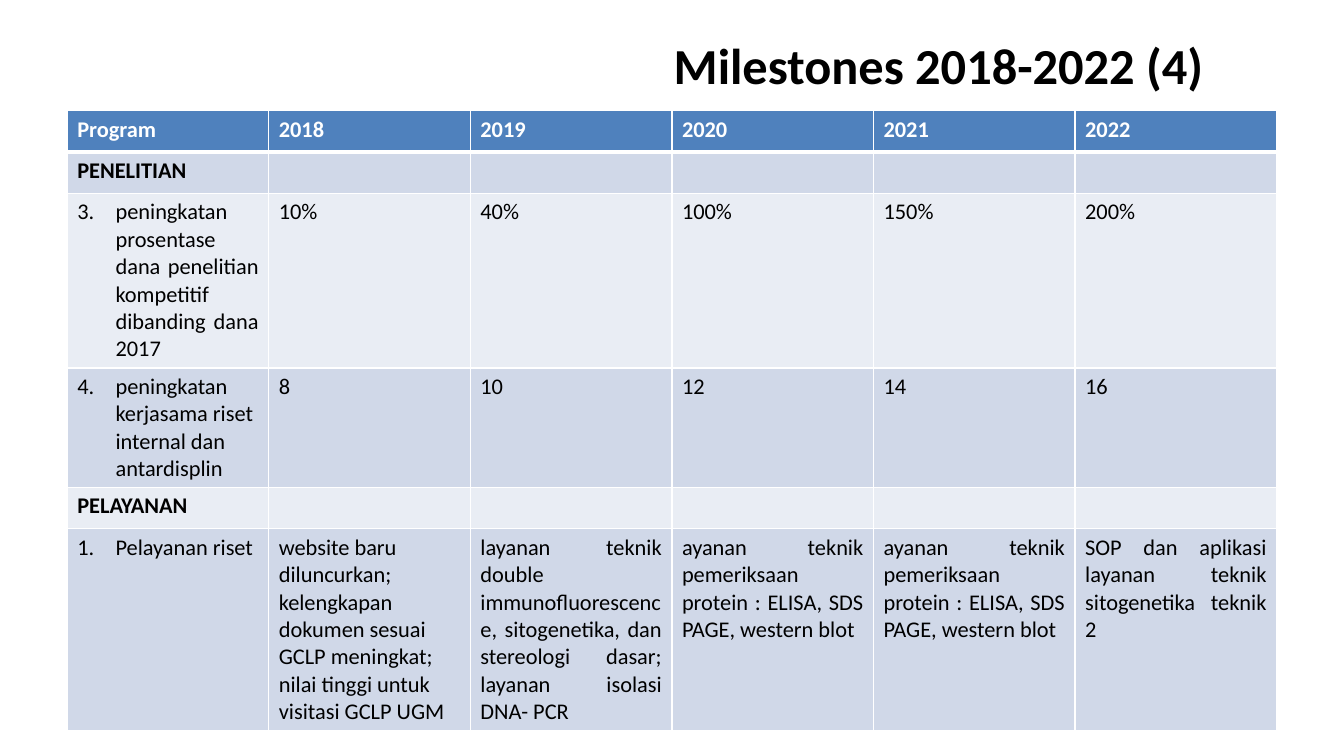
from dataclasses import dataclass
from typing import Optional

from lxml.etree import SubElement
from pptx import Presentation
from pptx.dml.color import RGBColor
from pptx.enum.text import MSO_ANCHOR as Anchor, PP_ALIGN as Align
from pptx.oxml.ns import qn
from pptx.util import Inches, Pt

COLORS = {"header": "4F81BD", "dark": "D0D8E8", "light": "E9EDF4",
          "line": "FFFFFF", "white": "FFFFFF", "black": "000000"}
FONT = "Calibri"
ROW_HEIGHT = Inches(0.41)
INDENT = Inches(0.38)


@dataclass
class Entry:
    text: str = ""
    bold: bool = False
    justified: bool = False
    number: Optional[int] = None


def heading(text: str, justified: bool = False) -> list[Entry]:
    return [Entry(text, bold=True, justified=justified)] + [Entry()] * 5


PROTEIN = Entry("ayanan teknik pemeriksaan protein : ELISA, SDS PAGE, western blot",
                justified=True)
ROWS = [
    [Entry(label, bold=True) for label in ("Program", *map(str, range(2018, 2023)))],
    heading("PENELITIAN"),
    [Entry("peningkatan prosentase dana penelitian kompetitif dibanding dana 2017",
           justified=True, number=3),
     Entry("10%", justified=True),
     *map(Entry, ("40%", "100%", "150%", "200%"))],
    [Entry("peningkatan kerjasama riset internal dan antardisplin", number=4),
     *map(Entry, ("8", "10", "12", "14", "16"))],
    heading("PELAYANAN", justified=True),
    [Entry("Pelayanan riset", justified=True, number=1),
     Entry("website baru diluncurkan; kelengkapan dokumen sesuai GCLP meningkat; "
           "nilai tinggi untuk visitasi GCLP UGM"),
     Entry("layanan teknik double immunofluorescence, sitogenetika, dan stereologi "
           "dasar; layanan isolasi DNA- PCR", justified=True),
     PROTEIN, PROTEIN,
     Entry("SOP dan aplikasi layanan teknik sitogenetika teknik 2", justified=True)],
]


def color(name: str) -> RGBColor:
    return RGBColor.from_string(COLORS[name])


def style_font(para, size: int, bold: bool, shade: str) -> None:
    font = para.font
    font.name, font.size, font.bold = FONT, Pt(size), bold
    font.color.rgb = color(shade)


def add_number(para, number: int) -> None:
    properties = para._p.get_or_add_pPr()
    properties.set("marL", str(INDENT))
    properties.set("indent", str(-INDENT))
    SubElement(properties, qn("a:buAutoNum"), type="arabicPeriod", startAt=str(number))


def add_borders(cell, row: int) -> None:
    properties = cell._tc.get_or_add_tcPr()
    thick_side = {0: "B", 1: "T"}.get(row)  # heavy rule under the header
    for side in "LRTB":
        width = Pt(3 if side == thick_side else 1)
        line = SubElement(properties, qn(f"a:ln{side}"), w=str(width))
        fill = SubElement(line, qn("a:solidFill"))
        SubElement(fill, qn("a:srgbClr"), val=COLORS["line"])


def fill_cell(cell, entry: Entry, row: int) -> None:
    add_borders(cell, row)
    cell.fill.solid()
    cell.fill.fore_color.rgb = color("header" if row == 0 else "dark" if row % 2 else "light")
    para = cell.text_frame.paragraphs[0]
    para.text = entry.text
    if entry.justified:
        para.alignment = Align.JUSTIFY
    if entry.number:
        add_number(para, entry.number)
    style_font(para, 16, entry.bold, "black" if row else "white")


def add_title(page) -> None:
    title = page.shapes.title
    title.left, title.top = Inches(5.95), Inches(0.3)
    title.width, title.height = Inches(6.72), Inches(0.68)
    title.text = "Milestones 2018-2022 (4)"
    title.text_frame.vertical_anchor = Anchor.MIDDLE
    para = title.text_frame.paragraphs[0]
    para.alignment = Align.CENTER
    style_font(para, 36, True, "black")


def add_milestones(page, slide_width: int) -> None:
    height = Inches(6.05)
    frame = page.shapes.add_table(len(ROWS), len(ROWS[0]), int(slide_width * 0.05),
                                  Inches(1.1), int(slide_width * 0.9), height)
    for row, entries in enumerate(ROWS):
        frame.table.rows[row].height = ROW_HEIGHT  # rows grow with their text
        for column, entry in enumerate(entries):
            fill_cell(frame.table.cell(row, column), entry, row)
    frame.height = height


def main() -> None:
    deck = Presentation()
    deck.slide_width, deck.slide_height = Inches(13.33), Inches(7.5)
    page = deck.slides.add_slide(deck.slide_layouts[5])
    add_title(page)
    add_milestones(page, deck.slide_width)
    deck.save("out.pptx")


if __name__ == "__main__":
    main()
